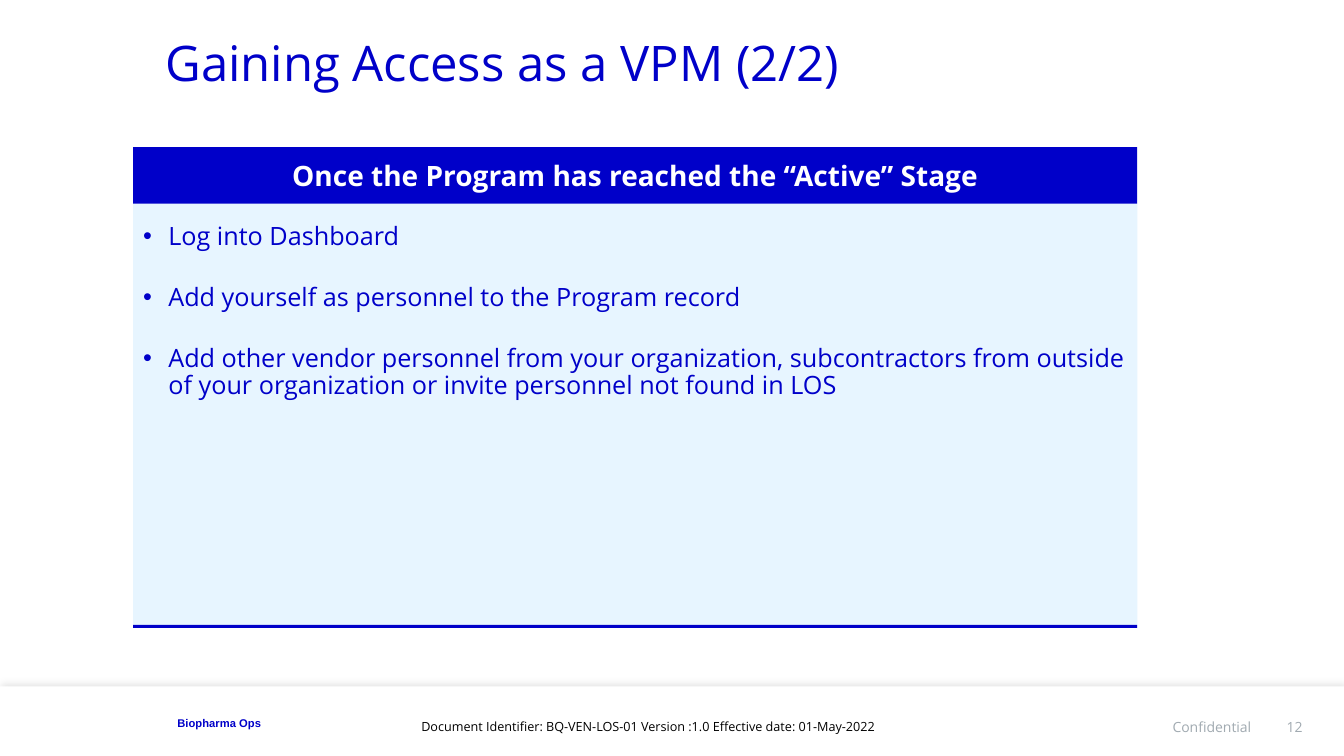
"""Build the slide on gaining access as a VPM, part two."""
import pptx
import pptx.dml.color
import pptx.enum.shapes
import pptx.enum.text
import pptx.oxml
import pptx.util
from pptx.util import Inches

COLORS = {"blue": "0000C9", "pale": "E7F5FF", "white": "FFFFFF", "gray": "A1AAB1", "black": "000000"}
NS = 'xmlns:a="http://schemas.openxmlformats.org/drawingml/2006/main"'
ALIGN = pptx.enum.text.PP_ALIGN
ANCHOR = pptx.enum.text.MSO_ANCHOR


def add_text(paragraph, text, size, color, font="Open Sans", bold=False):
    run = paragraph.add_run()
    run.text = text
    run.font.name = font
    run.font.size = pptx.util.Pt(size)
    run.font.bold = bold
    run.font.color.rgb = pptx.dml.color.RGBColor.from_string(COLORS[color])


def add_bar(left, top, width, height, color):
    bar = slide.shapes.add_shape(
        pptx.enum.shapes.MSO_SHAPE.RECTANGLE, Inches(left), Inches(top), Inches(width), Inches(height))
    bar.shadow.inherit = False
    bar.fill.solid()
    bar.fill.fore_color.rgb = pptx.dml.color.RGBColor.from_string(COLORS[color])
    bar.line.fill.background()
    return bar


deck = pptx.Presentation()
deck.slide_width, deck.slide_height = Inches(13.33), Inches(7.5)
slide = deck.slides.add_slide(deck.slide_layouts[1])

footer_band = add_bar(0, 6.81, 13.33, 0.7, "white")
effects = footer_band.fill._xPr.find("{http://schemas.openxmlformats.org/drawingml/2006/main}effectLst")
effects.append(pptx.oxml.parse_xml(
    f'<a:outerShdw {NS} blurRad="50800" dist="38100" dir="16200000" rotWithShape="0">'
    '<a:srgbClr val="000000"><a:alpha val="10000"/></a:srgbClr></a:outerShdw>'))

footers = [
    ("12", 12.62, 6.93, 0.3, ALIGN.RIGHT, 10, "gray", "Open Sans", False),
    ("Confidential", 6.56, 6.93, 5.85, ALIGN.RIGHT, 10, "gray", "Open Sans", False),
    ("Biopharma Ops", 1.76, 6.87, 4.53, ALIGN.LEFT, 8, "blue", "Arial", True),
]
for text, left, top, width, align, size, color, font, bold in footers:
    frame = slide.shapes.add_textbox(Inches(left), Inches(top), Inches(width), Inches(0.37)).text_frame
    frame.word_wrap = True
    frame.vertical_anchor = ANCHOR.BOTTOM
    frame.margin_left = frame.margin_right = frame.margin_top = frame.margin_bottom = 0
    footer = frame.paragraphs[0]
    footer.alignment = align
    footer.line_spacing = 0.9
    add_text(footer, text, size, color, font, bold)

title = slide.shapes.title
title.left, title.top, title.width, title.height = Inches(1.54), Inches(-0.07), Inches(9.96), Inches(1.45)
title.text_frame.auto_size = pptx.enum.text.MSO_AUTO_SIZE.NONE
title.text_frame.vertical_anchor = ANCHOR.MIDDLE
heading = title.text_frame.paragraphs[0]
heading.alignment = ALIGN.LEFT
heading.line_spacing = 0.9
add_text(heading, "Gaining Access as a VPM (2/2)", 35, "blue")

stage_header = add_bar(1.32, 1.46, 9.96, 0.56, "blue")
stage_header.text_frame.vertical_anchor = ANCHOR.MIDDLE
stage = stage_header.text_frame.paragraphs[0]
stage.alignment = ALIGN.CENTER
add_text(stage, "Once the Program has reached the “Active” Stage", 20, "white", bold=True)

steps = slide.placeholders[1]
steps.left, steps.top, steps.width, steps.height = Inches(1.32), Inches(2.02), Inches(9.96), Inches(4.21)
steps.fill.solid()
steps.fill.fore_color.rgb = pptx.dml.color.RGBColor.from_string(COLORS["pale"])
steps_frame = steps.text_frame
steps_frame.auto_size = pptx.enum.text.MSO_AUTO_SIZE.NONE
steps_frame.vertical_anchor = ANCHOR.TOP
steps_frame.margin_left = steps_frame.margin_right = Inches(0.1)
steps_frame.margin_top = steps_frame.margin_bottom = Inches(0.2)
instructions = [
    "Log into Dashboard",
    "Add yourself as personnel to the Program record",
    "Add other vendor personnel from your organization, subcontractors from outside "
    "of your organization or invite personnel not found in LOS",
]
for index, instruction in enumerate(instructions):
    step = steps_frame.add_paragraph() if index else steps_frame.paragraphs[0]
    step.alignment = ALIGN.LEFT
    step.line_spacing = 0.9
    step.space_before = pptx.util.Pt(12 if index else 0)
    step.space_after = pptx.util.Pt(12)
    properties = step._p.get_or_add_pPr()
    properties.set("marL", str(Inches(0.25)))
    properties.set("indent", str(Inches(-0.25)))
    for bullet in (f'<a:buClr {NS}><a:srgbClr val="{COLORS["blue"]}"/></a:buClr>',
                   f'<a:buFont {NS} typeface="Arial"/>',
                   f'<a:buChar {NS} char="•"/>'):
        properties.append(pptx.oxml.parse_xml(bullet))
    add_text(step, instruction, 18, "blue")

add_bar(1.32, 6.2, 9.96, 0.03, "blue")

identifier = slide.shapes.add_textbox(Inches(4.08), Inches(7.08), Inches(4.78), Inches(0.25)).text_frame
identifier.word_wrap = False
identifier.auto_size = pptx.enum.text.MSO_AUTO_SIZE.SHAPE_TO_FIT_TEXT
add_text(identifier.paragraphs[0],
         "Document Identifier: BQ-VEN-LOS-01 Version :1.0 Effective date: 01-May-2022", 9, "black")

deck.save("out.pptx")
